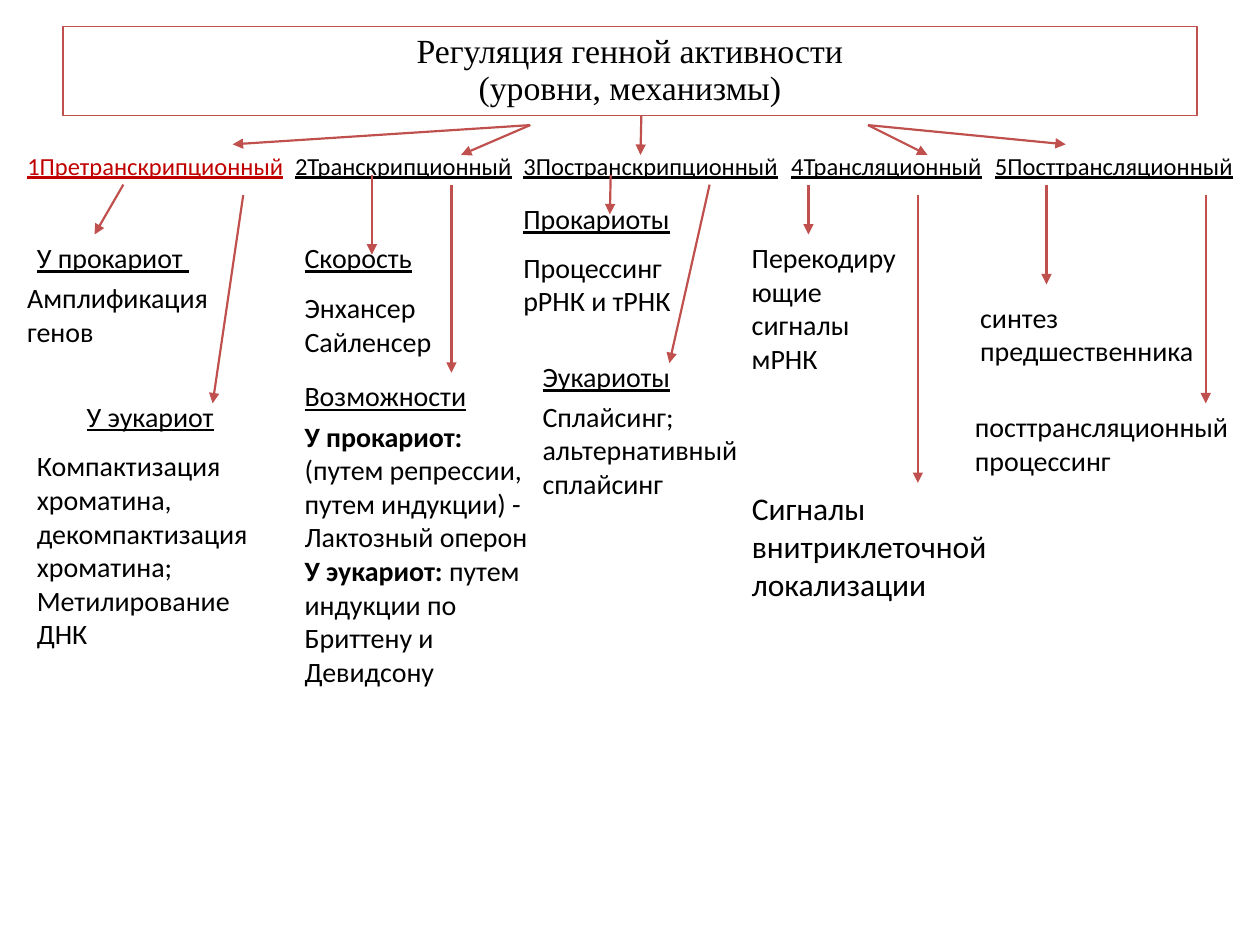
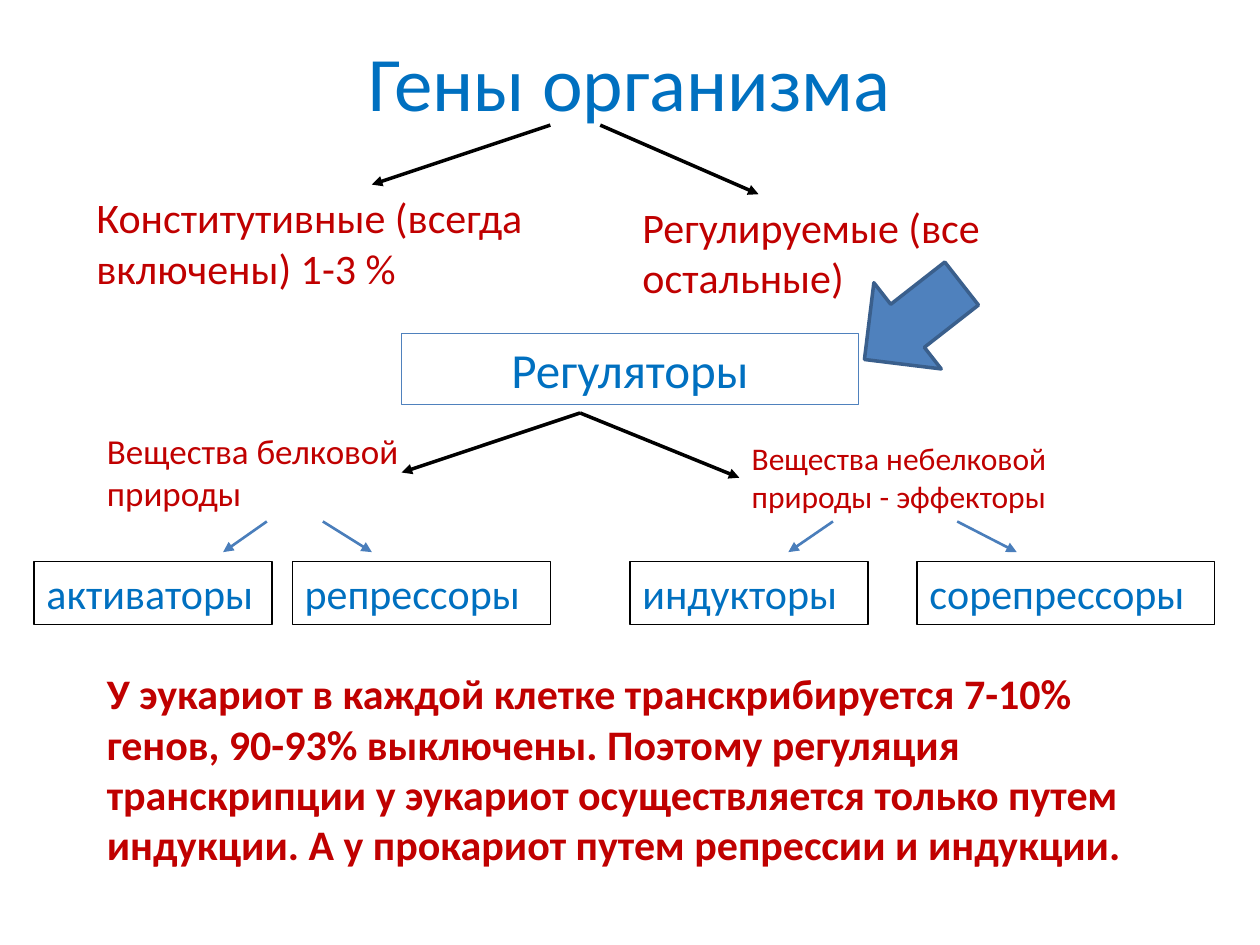
"""Builds two slides on the regulation of gene activity."""
import pptx
import pptx.dml.color
import pptx.enum.shapes
import pptx.enum.text
import pptx.oxml
import pptx.oxml.ns
import pptx.util

Pt = pptx.util.Pt
ALIGN = pptx.enum.text.PP_ALIGN
ANCHOR = pptx.enum.text.MSO_ANCHOR
FIT = pptx.enum.text.MSO_AUTO_SIZE
SHAPE = pptx.enum.shapes.MSO_SHAPE
LINK = pptx.enum.shapes.MSO_CONNECTOR.STRAIGHT
BLACK, RED, BLUE = "000000", "C00000", "0070C0"
BRICK, STEEL, SLATE, AZURE = "C0504D", "4F81BD", "3A5F8C", "4A7EBB"


def paint(target, color):
    target.rgb = pptx.dml.color.RGBColor.from_string(color)


class Deck:
    def __init__(self):
        self.file = pptx.Presentation()
        self.file.slide_width, self.file.slide_height = Pt(720), Pt(540)
        self.font = "Calibri"
        self.slide = None

    def page(self):
        self.slide = self.file.slides.add_slide(self.file.slide_layouts[5])

    def style(self, par, size, color, align=ALIGN.LEFT, font=None):
        par.alignment = align
        par.font.name, par.font.size = font or self.font, Pt(size)
        paint(par.font.color, color)

    def edge(self, shape, color, width):
        paint(shape.line.color, color)
        shape.line.width = Pt(width)

    def title(self, text, top, high, size, color, font=None, edge=None):
        shape = self.slide.shapes.title
        shape.left, shape.top, shape.width, shape.height = Pt(36), Pt(top), Pt(648), Pt(high)
        frame = shape.text_frame
        frame.auto_size, frame.vertical_anchor = FIT.NONE, ANCHOR.MIDDLE
        par = frame.paragraphs[0]
        par.text = text
        par.line_spacing = 0.9
        self.style(par, size, color, ALIGN.CENTER, font)
        if edge:
            self.edge(shape, edge, 0.75)

    def fill(self, shape, lines, size, color, align=ALIGN.LEFT, under=None, bold=None):
        frame = shape.text_frame
        frame.word_wrap, frame.auto_size = True, FIT.SHAPE_TO_FIT_TEXT
        frame.vertical_anchor = ANCHOR.TOP
        for i, line in enumerate(lines):
            par = frame.add_paragraph() if i else frame.paragraphs[0]
            head, mark, tail = line.partition("|")
            par.add_run().text = head
            if mark:
                par.runs[0].font.bold = True
                par.add_run().text = tail
            self.style(par, size, color, align)
            par.font.underline, par.font.bold = under, bold

    def text(self, x, y, wide, lines, size=16, color=BLACK, rows=1, **look):
        high = rows * size * 1.2 + 7.2
        shape = self.slide.shapes.add_textbox(Pt(x), Pt(y), Pt(wide), Pt(high))
        self.fill(shape, lines, size, color, **look)

    def box(self, x, y, wide, text, size, edge, align=ALIGN.LEFT):
        high = size * 1.2 + 7.2
        shape = self.slide.shapes.add_shape(SHAPE.RECTANGLE, Pt(x), Pt(y), Pt(wide), Pt(high))
        shape.shadow.inherit = False
        shape.fill.background()
        self.edge(shape, edge, 0.75)
        self.fill(shape, [text], size, BLUE, align)

    def block(self, x, y, wide, high, turn):
        shape = self.slide.shapes.add_shape(SHAPE.DOWN_ARROW, Pt(x), Pt(y), Pt(wide), Pt(high))
        shape.rotation = turn
        shape.shadow.inherit = False
        shape.fill.solid()
        paint(shape.fill.fore_color, STEEL)
        self.edge(shape, SLATE, 2)

    def arrow(self, x1, y1, x2, y2, color, width):
        line = self.slide.shapes.add_connector(LINK, Pt(x1), Pt(y1), Pt(x2), Pt(y2))
        self.edge(line, color, width)
        props = line.line._get_or_add_ln()
        tip = pptx.oxml.parse_xml('<a:tailEnd %s type="triangle"/>' % pptx.oxml.ns.nsdecls("a"))
        props.append(tip)
        props.addnext(pptx.oxml.parse_xml("<a:effectLst %s/>" % pptx.oxml.ns.nsdecls("a")))


def levels(deck):
    deck.page()
    deck.title("Регуляция генной активности\n(уровни, механизмы)", 15, 51, 19.3, BLACK,
               "Times New Roman", BRICK)
    for x, wide, name, color in [
        (8.5, 170, "1Претранскрипционный", RED),
        (161.5, 142, "2Транскрипционный", BLACK),
        (292, 198, "3Постранскрипционный", BLACK),
        (445, 124.5, "4Трансляционный", BLACK),
        (561.5, 158.5, "5Посттрансляционный", BLACK),
    ]:
        deck.text(x, 82.5, wide, [name], 14, color, under=True)
    for x, y, wide, name in [
        (14, 134, 113, "У прокариот "),
        (42.5, 224.5, 91, "У эукариот"),
        (167, 134, 79, "Скорость"),
        (167, 213, 108, "Возможности"),
        (292, 111.5, 108, "Прокариоты"),
        (303, 202, 102, "Эукариоты"),
    ]:
        deck.text(x, y, wide, [name], under=True)
    for x, y, wide, rows, lines in [
        (8.5, 157, 136, 2, ["Амплификация генов"]),
        (14, 253, 136, 6, ["Компактизация хроматина, декомпактизация хроматина;",
                           "Метилирование ДНК"]),
        (167, 162.5, 91, 2, ["Энхансер", "Сайленсер"]),
        (167, 236, 142, 8, ["У прокариот: |(путем репрессии, путем индукции) - Лактозный оперон",
                            "У эукариот:| путем индукции по Бриттену и Девидсону"]),
        (292, 139.5, 124.5, 2, ["Процессинг рРНК и тРНК"]),
        (303, 224.5, 136, 3, ["Сплайсинг; альтернативный сплайсинг"]),
        (422.5, 134, 102, 4, ["Перекодирующие сигналы мРНК"]),
        (553, 168, 153.5, 2, ["синтез предшественника"]),
        (550, 230.5, 170, 2, ["посттрансляционный процессинг"]),
    ]:
        deck.text(x, y, wide, lines, rows=rows)
    deck.text(422.5, 276, 153.5, ["Сигналы внитриклеточной локализации"], 18, rows=3)
    for ends in [
        (303, 71.5, 133, 82.5), (303, 71.5, 263.5, 88.5), (366.5, 66, 366, 88.5),
        (496, 71.5, 530, 88.5), (496, 71.5, 609, 82.5),
        (70.5, 105.5, 54, 134), (139, 111.5, 121.5, 230.5),
        (212.5, 100, 212.5, 145.5), (258, 105.5, 258, 213),
        (349, 100, 348.5, 122.5), (405.5, 105.5, 382.5, 207.5),
        (462, 105.5, 462, 134), (524.5, 111.5, 524.5, 276),
        (598, 105.5, 598, 162.5), (689, 111.5, 689, 230.5),
    ]:
        deck.arrow(*ends, BRICK, 1.25)


def genes(deck):
    deck.page()
    deck.title("Гены организма", 21.5, 55.5, 44, BLUE)
    for x, y, wide, size, text in [
        (48, 106, 272, 24, "Конститутивные (всегда включены) 1-3 %"),
        (360, 111.5, 289.5, 24, "Регулируемые (все остальные)"),
        (54, 242, 198, 20, "Вещества белковой природы"),
        (422.5, 247.5, 227, 18, "Вещества небелковой природы - эффекторы"),
    ]:
        deck.text(x, y, wide, [text], size, RED, 2)
    deck.box(229.5, 190.5, 261, "Регуляторы", 28, STEEL, ALIGN.CENTER)
    for x, wide, name in [(19.5, 136, "активаторы"), (167, 147.5, "репрессоры"),
                          (360, 136, "индукторы"), (524, 170, "сорепрессоры")]:
        deck.box(x, 321, wide, name, 24, BLACK)
    deck.text(54, 378, 629, [
        "У эукариот в каждой клетке транскрибируется 7-10% генов, 90-93% выключены. "
        "Поэтому регуляция транскрипции у эукариот осуществляется только путем индукции. "
        "А у прокариот путем репрессии и индукции."], 24, RED, 4, bold=True)
    deck.block(490.5, 148.5, 62.5, 70.5, 52)
    for ends in [(314.5, 71.5, 212.5, 105.5), (343, 71.5, 433.5, 111),
                 (331.5, 236, 229.5, 270), (331.5, 236, 422.5, 273)]:
        deck.arrow(*ends, BLACK, 2)
    for start, end in [(152.5, 127.5), (184.5, 212.5), (476, 450.5), (547, 581)]:
        deck.arrow(start, 298, end, 315.5, AZURE, 1.5)


def main():
    deck = Deck()
    levels(deck)
    genes(deck)
    deck.file.save("out.pptx")


if __name__ == "__main__":
    main()
